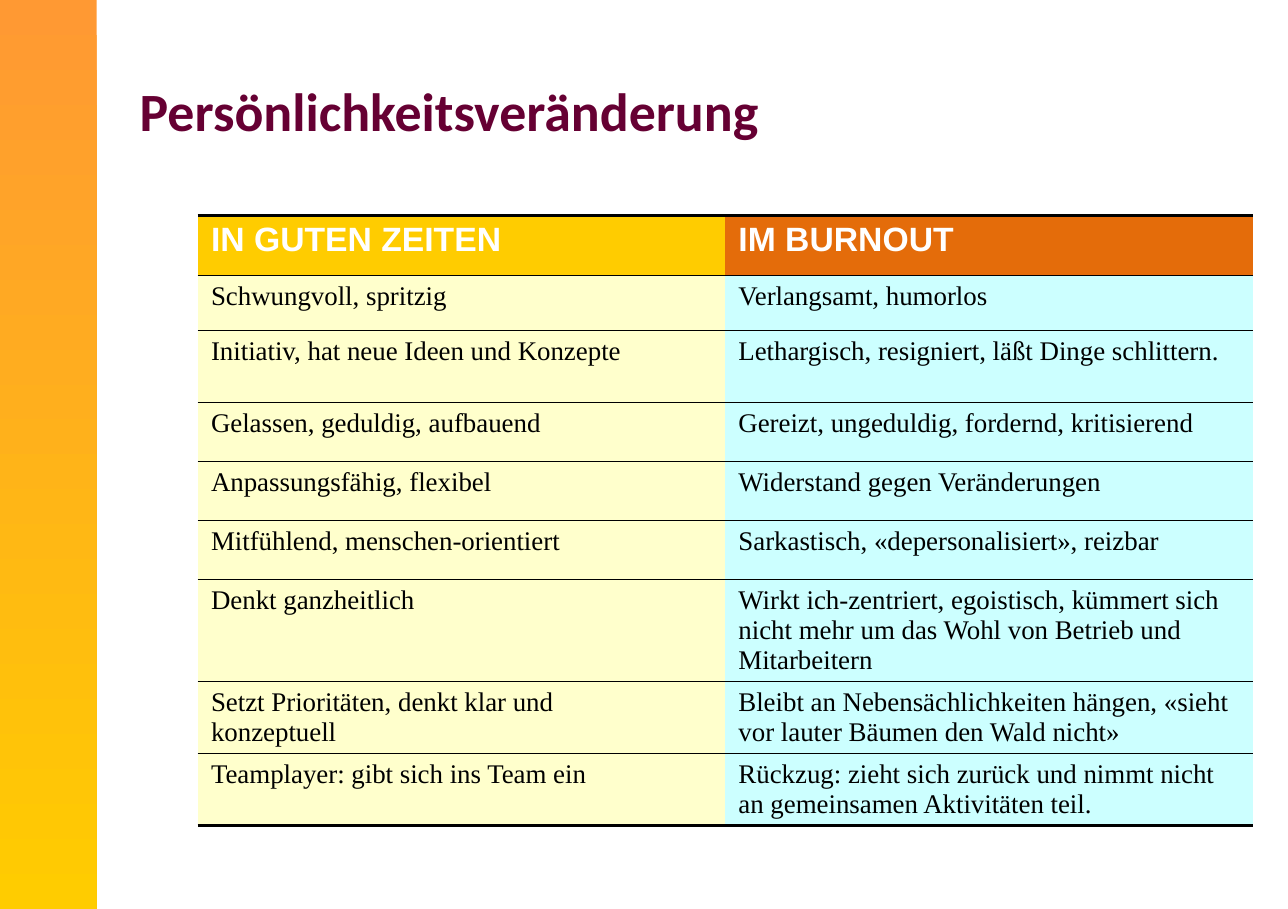
from dataclasses import dataclass

from lxml import etree
from pptx import Presentation
from pptx import util as u
from pptx.dml.color import RGBColor
from pptx.enum import shapes, text
from pptx.oxml import ns


@dataclass(frozen=True)
class Theme:
    """Colours, fonts and sizes of the slide."""
    bar: tuple = ("FF9933", "FFCC00")
    title: tuple = ("Calibri", 32, "660033", True)
    header: tuple = ("Arial", 20, "FFFFFF", True)
    body: tuple = ("Times New Roman", 16, "000000", False)
    header_fills: tuple = ("FFCC00", "E46C0A")
    body_fills: tuple = ("FFFFCC", "CCFFFF")
    rule: str = "000000"
    thin: float = 1
    thick: float = 2.25


THEME = Theme()
WIDTH, HEIGHT = u.Inches(10.63), u.Inches(7.5)
ROWS = [
    (6.6, "IN GUTEN ZEITEN", "IM BURNOUT"),
    (6.05, "Schwungvoll, spritzig", "Verlangsamt, humorlos"),
    (7.92, "Initiativ, hat neue Ideen und Konzepte",
     "Lethargisch, resigniert, läßt Dinge schlittern."),
    (6.5, "Gelassen, geduldig, aufbauend",
     "Gereizt, ungeduldig, fordernd, kritisierend"),
    (6.5, "Anpassungsfähig, flexibel", "Widerstand gegen Veränderungen"),
    (6.5, "Mitfühlend, menschen-orientiert",
     "Sarkastisch, «depersonalisiert», reizbar"),
    (11.15, "Denkt ganzheitlich",
     "Wirkt ich-zentriert, egoistisch, kümmert sich nicht mehr um das "
     "Wohl von Betrieb und Mitarbeitern"),
    (7.92, "Setzt Prioritäten, denkt klar und\nkonzeptuell",
     "Bleibt an Nebensächlichkeiten hängen, «sieht vor lauter Bäumen "
     "den Wald nicht»"),
    (7.92, "Teamplayer: gibt sich ins Team ein",
     "Rückzug: zieht sich zurück und nimmt nicht an gemeinsamen "
     "Aktivitäten teil."),
]


def across(percent):
    """Return a share of the slide width."""
    return round(WIDTH * percent / 100)


def down(percent):
    """Return a share of the slide height."""
    return round(HEIGHT * percent / 100)


def write(frame, words, style):
    """Write words into the first paragraph, one run per line."""
    para = frame.paragraphs[0]
    para.alignment = text.PP_ALIGN.LEFT
    para.space_before = u.Pt(0)
    name, size, colour, bold = style
    for index, line in enumerate(words.split("\n")):
        if index:
            para.add_line_break()
        span = para.add_run()
        span.text = line
        span.font.name, span.font.size, span.font.bold = name, u.Pt(size), bold
        span.font.color.rgb = RGBColor.from_string(colour)


def add_bar(page):
    """Draw the gradient bar on the left edge."""
    bar = page.shapes.add_shape(
        shapes.MSO_SHAPE.RECTANGLE, 0, 0, across(7.5), down(100))
    bar.shadow.inherit = False
    bar.line.fill.background()
    bar.fill.gradient()
    bar.fill.gradient_angle = 270
    for stop, colour, position in zip(bar.fill.gradient_stops, THEME.bar, (0, 1)):
        stop.color.rgb = RGBColor.from_string(colour)
        stop.position = position


def set_title(page, words):
    """Place and fill the title placeholder."""
    box = page.shapes.title
    box.left, box.top = across(9.9), down(5.9)
    box.width, box.height = across(87.8), down(12.5)
    box.text_frame.vertical_anchor = text.MSO_ANCHOR.MIDDLE
    write(box.text_frame, words, THEME.title)


def set_borders(cell, top, bottom):
    """Rule a cell above and below and leave its sides open."""
    properties = cell._tc.get_or_add_tcPr()
    for side, width in (("L", 0), ("R", 0), ("T", top), ("B", bottom)):
        line = etree.SubElement(properties, ns.qn(f"a:ln{side}"), w=str(u.Pt(width)))
        if width:
            fill = etree.SubElement(line, ns.qn("a:solidFill"))
            etree.SubElement(fill, ns.qn("a:srgbClr"), val=THEME.rule)
        else:
            etree.SubElement(line, ns.qn("a:noFill"))


def fill_cell(cell, words, style, colour, top, bottom):
    """Format and fill one table cell."""
    set_borders(cell, top, bottom)
    cell.fill.solid()
    cell.fill.fore_color.rgb = RGBColor.from_string(colour)
    cell.margin_left = cell.margin_right = u.Inches(0.11)
    cell.margin_top = cell.margin_bottom = u.Inches(0.05)
    write(cell.text_frame, words, style)


def add_comparison(page):
    """Build the table of good times against burnout."""
    height = down(sum(share for share, *_ in ROWS))
    table = page.shapes.add_table(
        len(ROWS), 2, across(15.35), down(23.7), across(81.9), height).table
    table.first_row = table.horz_banding = False
    last = len(ROWS) - 1
    for index, (share, *entries) in enumerate(ROWS):
        table.rows[index].height = down(share)
        style = THEME.body if index else THEME.header
        fills = THEME.body_fills if index else THEME.header_fills
        top = THEME.thin if index else THEME.thick
        bottom = THEME.thick if index == last else THEME.thin
        for column, (words, colour) in enumerate(zip(entries, fills)):
            fill_cell(table.cell(index, column), words, style, colour, top, bottom)


def main():
    """Build and save the slide."""
    deck = Presentation()
    deck.slide_width, deck.slide_height = WIDTH, HEIGHT
    page = deck.slides.add_slide(deck.slide_layouts[5])
    add_bar(page)
    set_title(page, "Persönlichkeitsveränderung")
    add_comparison(page)
    deck.save("out.pptx")


if __name__ == "__main__":
    main()
